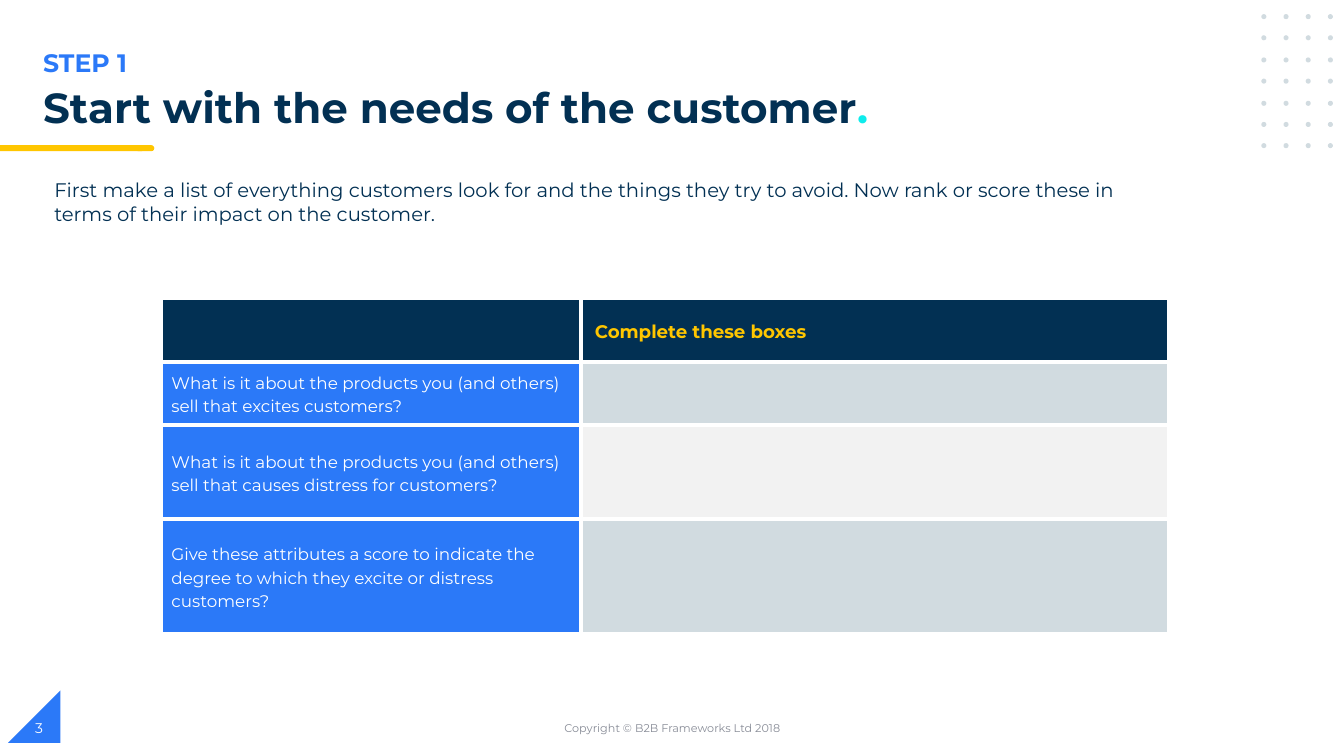
import pptx
import pptx.dml.color
import pptx.enum.shapes
import pptx.enum.text
import pptx.oxml.ns
import pptx.util
from lxml import etree

PX = 9144  # EMU per px, 100 px to the inch
COLORS = {
    "blue": "2B79F8",
    "navy": "023053",
    "yellow": "FFC600",
    "cyan": "0EECEC",
    "dot": "D1DBE0",
    "pale": "F2F2F2",
    "grey": "888C97",
    "white": "FFFFFF",
}
SHAPES = pptx.enum.shapes.MSO_SHAPE
ALIGN = pptx.enum.text.PP_ALIGN
ANCHOR = pptx.enum.text.MSO_ANCHOR


def px(*lengths):
    return [pptx.util.Emu(length * PX) for length in lengths]


def rgb(color):
    return pptx.dml.color.RGBColor.from_string(COLORS[color])


class SlideBuilder:
    font_name = "Montserrat"

    def __init__(self, slide):
        self.slide = slide

    def shape(self, kind, box, color, flip=False):
        shape = self.slide.shapes.add_shape(kind, *px(*box))
        shape.shadow.inherit = False
        shape.fill.solid()
        shape.fill.fore_color.rgb = rgb(color)
        shape.line.fill.background()
        if flip:
            shape._element.spPr.xfrm.set("flipH", "1")

    def paragraph(self, paragraph, runs, size, bold=False, spacing=None, align=ALIGN.LEFT):
        """Fill a paragraph with (text, color) runs."""
        paragraph.alignment = align
        paragraph.line_spacing = spacing
        font = paragraph.font
        font.name, font.size, font.bold = self.font_name, pptx.util.Pt(size), bold
        if len(runs) == 1:
            font.color.rgb = rgb(runs[0][1])
        for text, color in runs:
            run = paragraph.add_run()
            run.text = text
            if len(runs) > 1:
                run.font.color.rgb = rgb(color)

    def text(self, box, runs, size, anchor=ANCHOR.TOP, **style):
        frame = self.slide.shapes.add_textbox(*px(*box)).text_frame
        frame.word_wrap = True
        frame.vertical_anchor = anchor
        self.paragraph(frame.paragraphs[0], runs, size, **style)

    def border(self, cell, color, width):
        properties = cell._tc.get_or_add_tcPr()
        for side in ("a:lnL", "a:lnR", "a:lnT", "a:lnB"):
            line = etree.SubElement(properties, pptx.oxml.ns.qn(side), w=str(pptx.util.Pt(width)))
            fill = etree.SubElement(line, pptx.oxml.ns.qn("a:solidFill"))
            etree.SubElement(fill, pptx.oxml.ns.qn("a:srgbClr"), val=COLORS[color])

    def cell(self, cell, fill, text="", color="white", size=12, bold=False, left=10):
        self.border(cell, "white", 3)
        cell.fill.solid()
        cell.fill.fore_color.rgb = rgb(fill)
        cell.vertical_anchor = ANCHOR.MIDDLE
        cell.margin_left, cell.margin_right, cell.margin_top, cell.margin_bottom = px(left, 10, 0, 0)
        if text:
            self.paragraph(cell.text_frame.paragraphs[0], [(text, color)], size, bold, spacing=1.15)

    def table(self, left, top, widths, heights):
        box = px(left, top, sum(widths), sum(heights))
        table = self.slide.shapes.add_table(len(heights), len(widths), *box).table
        table.first_row = table.horz_banding = False
        for column, width in zip(table.columns, px(*widths)):
            column.width = width
        for row, height in zip(table.rows, px(*heights)):
            row.height = height
        return table


def main():
    presentation = pptx.Presentation()
    presentation.slide_width, presentation.slide_height = px(1333, 750)
    builder = SlideBuilder(presentation.slides.add_slide(presentation.slide_layouts[6]))

    # Corner triangle and yellow rule
    builder.shape(SHAPES.RIGHT_TRIANGLE, (8, 685, 52, 52), "blue", flip=True)
    builder.shape(SHAPES.FLOWCHART_TERMINATOR, (134, 144, 19, 6), "yellow")
    builder.shape(SHAPES.RECTANGLE, (0, 144, 141, 6), "yellow")

    # Dot grid
    for row in range(7):
        for column in range(4):
            box = (1251 + 22 * column, round(14 + 21.4 * row), 5, 5)
            builder.shape(SHAPES.OVAL, box, "dot")

    # Heading and introduction
    builder.text((33, 42, 669, 40), [("STEP 1", "blue")], 18, bold=True)
    title = [("Start with the needs of the customer", "navy"), (".", "cyan")]
    builder.text((33, 82, 1030, 40), title, 30, bold=True, spacing=0.9)
    introduction = (
        "First make a list of everything customers look for and the things they try to avoid. "
        "Now rank or score these in terms of their impact on the customer."
    )
    builder.text((44, 172, 1117, 57), [(introduction, "navy")], 14)

    # Question table
    questions = [
        ("What is it about the products you (and others) sell that excites customers?", "dot"),
        ("What is it about the products you (and others) sell that causes distress for customers?", "pale"),
        ("Give these attributes a score to indicate the degree to which they excite or distress customers?", "dot"),
    ]
    table = builder.table(160, 296, widths=(416, 583), heights=(63, 63, 93, 114))
    builder.cell(table.cell(0, 0), "navy")
    builder.cell(table.cell(0, 1), "navy", "Complete these boxes", "yellow", 13, bold=True, left=14)
    for row, (question, answer_fill) in enumerate(questions, start=1):
        builder.cell(table.cell(row, 0), "blue", question)
        builder.cell(table.cell(row, 1), answer_fill)

    # Footer
    copyright_line = [("Copyright © B2B Frameworks Ltd 2018", "grey")]
    builder.text((442, 702, 450, 40), copyright_line, 8, ANCHOR.MIDDLE, align=ALIGN.CENTER)
    builder.text((25, 702, 300, 40), [("3", "white")], 10, ANCHOR.MIDDLE)

    presentation.save("out.pptx")


if __name__ == "__main__":
    main()
